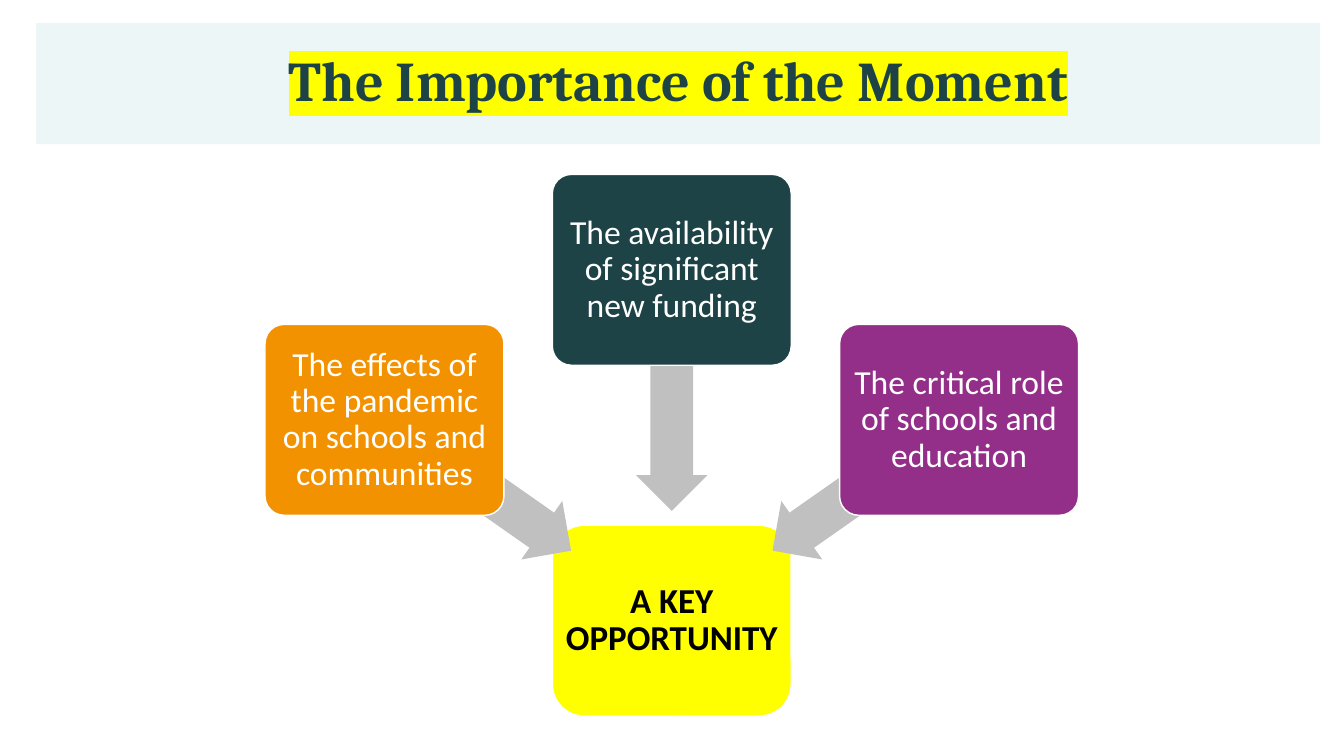
import pptx
import pptx.dml.color
import pptx.enum.shapes
import pptx.enum.text
import pptx.oxml
import pptx.oxml.ns
import pptx.util

Cm = pptx.util.Cm
RGBColor = pptx.dml.color.RGBColor
MSO_SHAPE = pptx.enum.shapes.MSO_SHAPE

WHITE = RGBColor(0xFF, 0xFF, 0xFF)
BLACK = RGBColor(0x00, 0x00, 0x00)
YELLOW = RGBColor(0xFF, 0xFF, 0x00)
TEAL = RGBColor(0x1D, 0x43, 0x46)
PALE = RGBColor(0xED, 0xF6, 0xF7)
ORANGE = RGBColor(0xF3, 0x92, 0x00)
PURPLE = RGBColor(0x94, 0x2F, 0x89)
GREY = RGBColor(0xC0, 0xC0, 0xC0)

CENTER = 16.93
BOX_W, BOX_H = 6.02, 4.81
BOX_STEP, ARROW_STEP = 7.24, 4.89


def write(tf, text, font="Calibri", size=24, color=WHITE, bold=False,
          highlight=None, margins=(0.13, 0.13)):
    """Fill a text frame with one centred, formatted paragraph."""
    tf.word_wrap = True
    tf.auto_size = pptx.enum.text.MSO_AUTO_SIZE.NONE
    tf.vertical_anchor = pptx.enum.text.MSO_ANCHOR.MIDDLE
    tf.margin_left = tf.margin_right = Cm(margins[0])
    tf.margin_top = tf.margin_bottom = Cm(margins[1])
    p = tf.paragraphs[0]
    p.alignment = pptx.enum.text.PP_ALIGN.CENTER
    p.line_spacing = 0.9
    r = p.add_run()
    r.text = text
    r.font.name = font
    r.font.size = pptx.util.Pt(size)
    r.font.bold = bold
    r.font.color.rgb = color
    if highlight is not None:
        mark = pptx.oxml.parse_xml(
            f'<a:highlight {pptx.oxml.ns.nsdecls("a")}>'
            f'<a:srgbClr val="{highlight}"/></a:highlight>')
        latin = r._r.get_or_add_rPr().find(pptx.oxml.ns.qn("a:latin"))
        latin.addprevious(mark)


class Deck:
    """Holds the presentation style and the current slide."""

    def __init__(self):
        """Open a widescreen presentation with one title-only slide."""
        self.prs = pptx.Presentation()
        self.prs.slide_width = Cm(33.87)
        self.prs.slide_height = Cm(19.05)
        self.slide = self.prs.slides.add_slide(self.prs.slide_layouts[5])

    def title(self, text):
        """Place the highlighted title on its pale band."""
        sp = self.slide.shapes.title
        sp.left, sp.top, sp.width, sp.height = map(Cm, (0.91, 0.58, 32.36, 3.05))
        sp.fill.solid()
        sp.fill.fore_color.rgb = PALE
        write(sp.text_frame, text, font="Cambria", size=40, color=TEAL,
              bold=True, highlight=YELLOW, margins=(0.25, 0.13))

    def shape(self, kind, cx, cy, width, height, fill, adjustments):
        """Add a filled shape around a centre point."""
        sp = self.slide.shapes.add_shape(
            kind, Cm(cx - width / 2), Cm(cy - height / 2), Cm(width), Cm(height))
        sp.shadow.inherit = False
        sp.fill.solid()
        sp.fill.fore_color.rgb = fill
        sp.line.fill.background()
        for i, value in enumerate(adjustments):
            sp.adjustments[i] = value
        return sp

    def box(self, text, cx, cy, fill, corner=0.1, **style):
        """Add a rounded box with a white edge and text."""
        sp = self.shape(MSO_SHAPE.ROUNDED_RECTANGLE, cx, cy, BOX_W, BOX_H,
                        fill, [corner])
        sp.line.color.rgb = WHITE
        sp.line.width = pptx.util.Pt(1)
        write(sp.text_frame, text, **style)

    def arrow(self, cx, cy, length, angle):
        """Add a grey block arrow turned by an angle."""
        sp = self.shape(MSO_SHAPE.LEFT_ARROW, cx, cy, length, 1.8, GREY, [0.6, 0.5])
        sp.rotation = angle


def main():
    """Build the slide and save it."""
    deck = Deck()
    deck.title("The Importance of the Moment")
    deck.box("A KEY OPPORTUNITY", CENTER, 15.64, YELLOW, corner=0.167,
             size=25, color=BLACK, bold=True, margins=(0.05, 0.05))
    causes = [
        ("The effects of the pandemic on schools and communities",
         ORANGE, -1, 10.58, 12.23, 5.74),
        ("The availability of significant new funding",
         TEAL, 0, 6.8, 9.84, 6.07),
        ("The critical role of schools and education",
         PURPLE, 1, 10.58, 12.23, 5.74),
    ]
    for text, fill, side, box_y, arrow_y, length in causes:
        deck.arrow(CENTER + side * ARROW_STEP, arrow_y, length, 270 + side * 55)
        deck.box(text, CENTER + side * BOX_STEP, box_y, fill)
    deck.prs.save("out.pptx")


if __name__ == "__main__":
    main()
